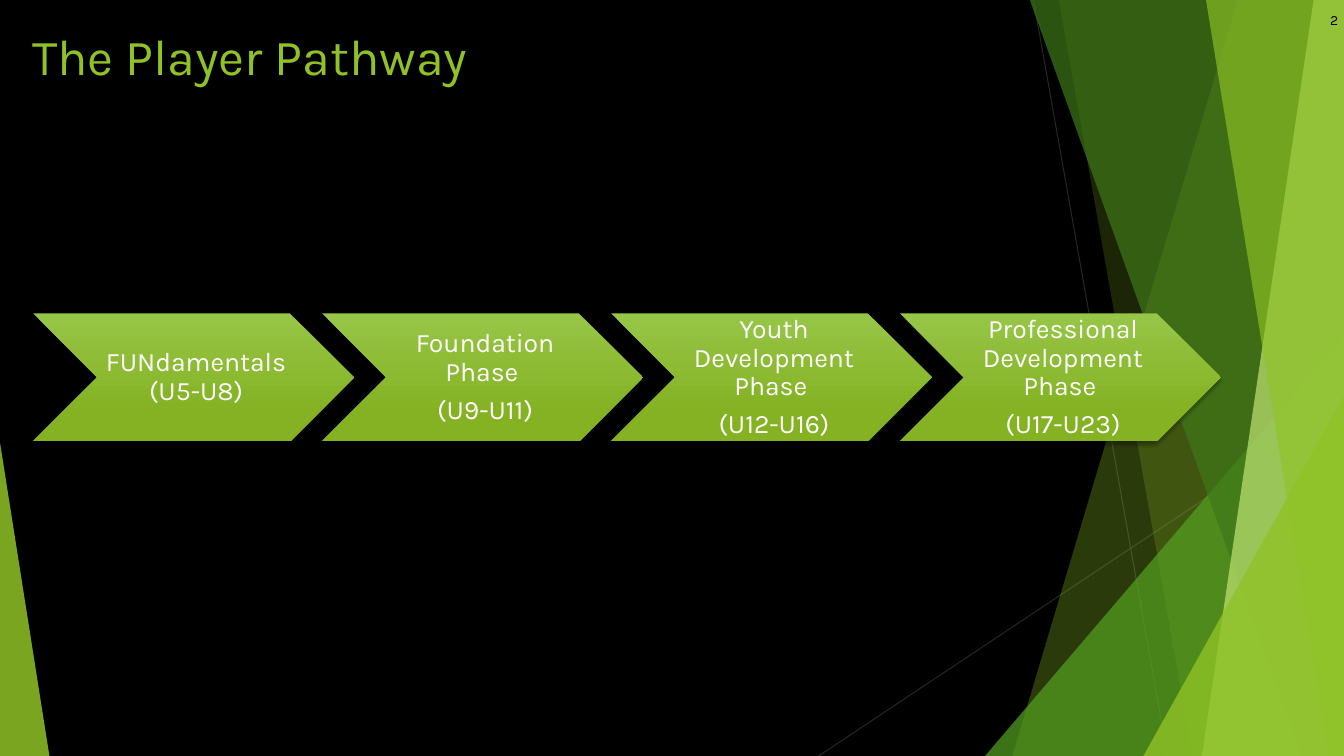
import dataclasses
import typing

import lxml.etree
import pptx
import pptx.dml.color
import pptx.enum.shapes
import pptx.enum.text
import pptx.oxml.ns
import pptx.util

Inches = pptx.util.Inches
Pt = pptx.util.Pt
Shape = pptx.enum.shapes.MSO_SHAPE
Align = pptx.enum.text.PP_ALIGN
Anchor = pptx.enum.text.MSO_ANCHOR
qn = pptx.oxml.ns.qn

SLIDE_W, SLIDE_H = 13.33, 7.5
BAND_TOP = -0.01


@dataclasses.dataclass(frozen=True)
class Theme:
    font: str = "Karla"
    title_size: int = 36
    phase_size: int = 19
    number_size: int = 10
    black: str = "000000"
    white: str = "FFFFFF"
    hairline: str = "262626"
    lime: str = "90C226"
    green: str = "54A021"
    forest: str = "3F7819"
    pale: str = "C0E474"
    chevron_top: str = "97C547"
    chevron_bottom: str = "84B223"


@dataclasses.dataclass(frozen=True)
class Band:
    """A band that runs from a slanted left edge to the slide's right edge."""
    top_x: float
    bottom_x: float
    color: str
    alpha: int


@dataclasses.dataclass(frozen=True)
class Corner:
    """A right triangle that stands on the slide's bottom edge."""
    left: float
    top: float
    width: float
    apex: int
    color: str
    alpha: int


@dataclasses.dataclass(frozen=True)
class TextStyle:
    size: int
    color: str
    align: Align = Align.LEFT
    anchor: Anchor = Anchor.TOP
    insets: tuple[float, float, float, float] = (0.1, 0.05, 0.1, 0.05)
    line_spacing: float = 1.0
    space_after: float = 0


THEME = Theme()
RAYS = [((10.25, 0), (11.58, 7.5)), ((13.33, 4.03), (8.12, 7.5))]
FACETS = [
    Band(12.28, 10.04, THEME.lime, 30),
    Band(10.5, 11.83, THEME.lime, 20),
    Corner(9.77, 3.33, 3.56, 1, THEME.green, 72),
    Band(10.21, 12.91, THEME.forest, 70),
    Band(13.03, 11.92, THEME.pale, 70),
    Band(11.96, 13.18, THEME.lime, 65),
    Corner(11.34, 3.93, 1.99, 1, THEME.lime, 80),
    Corner(0, 4.39, 0.49, 0, THEME.lime, 85),
]
PHASES = [
    ["FUNdamentals (U5-U8)"],
    ["Foundation Phase ", "(U9-U11)"],
    ["Youth Development Phase ", "(U12-U16)"],
    ["Professional Development Phase ", "(U17-U23)"],
]
PHASE_LEFT, PHASE_TOP, PHASE_STEP = 0.33, 3.11, 2.866
PHASE_W, PHASE_H = 3.18, 1.27
LABEL_W = PHASE_W - PHASE_H

TITLE = TextStyle(THEME.title_size, THEME.lime)
LABEL = TextStyle(THEME.phase_size, THEME.white, Align.CENTER, Anchor.MIDDLE,
                  (0.08, 0.03, 0.03, 0.03), 0.9, 6.65)
NUMBER = TextStyle(THEME.number_size, THEME.black, Align.RIGHT, Anchor.MIDDLE)


def rgb(color: str) -> pptx.dml.color.RGBColor:
    return pptx.dml.color.RGBColor.from_string(color)


def add_ray(slide: typing.Any, start: tuple, end: tuple) -> None:
    line = slide.shapes.add_connector(
        pptx.enum.shapes.MSO_CONNECTOR.STRAIGHT,
        *(Inches(v) for v in (*start, *end)))
    line.line.color.rgb = rgb(THEME.hairline)
    line.line.width = Pt(0.75)
    lxml.etree.SubElement(line._element.spPr, qn("a:effectLst"))


def add_facet(slide: typing.Any, facet: Band | Corner) -> None:
    if isinstance(facet, Band):
        builder = slide.shapes.build_freeform(Inches(facet.top_x), Inches(BAND_TOP))
        corners = [(SLIDE_W, BAND_TOP), (SLIDE_W, SLIDE_H), (facet.bottom_x, SLIDE_H)]
        builder.add_line_segments([(Inches(x), Inches(y)) for x, y in corners])
        sp = builder.convert_to_shape()
    else:
        sp = slide.shapes.add_shape(
            Shape.ISOSCELES_TRIANGLE, Inches(facet.left), Inches(facet.top),
            Inches(facet.width), Inches(SLIDE_H - facet.top))
        sp.adjustments[0] = facet.apex
    sp.shadow.inherit = False
    sp.line.fill.background()
    sp.fill.solid()
    sp.fill.fore_color.rgb = rgb(facet.color)
    clr = sp._element.spPr.find(qn("a:solidFill")).find(qn("a:srgbClr"))
    lxml.etree.SubElement(clr, qn("a:alpha"), val=str(facet.alpha * 1000))


def add_text(slide: typing.Any, box: tuple, paragraphs: list[str],
             style: TextStyle) -> None:
    tf = slide.shapes.add_textbox(*(Inches(v) for v in box)).text_frame
    tf.word_wrap = True
    tf.vertical_anchor = style.anchor
    tf.margin_left, tf.margin_top, tf.margin_right, tf.margin_bottom = (
        Inches(v) for v in style.insets)
    for i, text in enumerate(paragraphs):
        p = tf.add_paragraph() if i else tf.paragraphs[0]
        p.alignment = style.align
        p.line_spacing = style.line_spacing
        p.space_after = Pt(style.space_after)
        r = p.add_run()
        r.text = text
        r.font.name = THEME.font
        r.font.size = Pt(style.size)
        r.font.color.rgb = rgb(style.color)


def add_soft_shadow(sp: typing.Any) -> None:
    sp.shadow.inherit = False
    effects = sp._element.spPr.find(qn("a:effectLst"))
    shadow = lxml.etree.SubElement(
        effects, qn("a:outerShdw"), blurRad=str(Pt(3)), dist=str(Pt(2)),
        dir="5400000", rotWithShape="0")
    clr = lxml.etree.SubElement(shadow, qn("a:srgbClr"), val=THEME.black)
    lxml.etree.SubElement(clr, qn("a:alpha"), val="35000")


def add_phase(slide: typing.Any, left: float, paragraphs: list[str]) -> None:
    sp = slide.shapes.add_shape(Shape.CHEVRON, Inches(left), Inches(PHASE_TOP),
                                Inches(PHASE_W), Inches(PHASE_H))
    sp.line.fill.background()
    sp.fill.gradient()
    sp.fill.gradient_angle = 270
    stops = [(0, THEME.chevron_top), (0.78, THEME.chevron_bottom)]
    for stop, (position, color) in zip(sp.fill.gradient_stops, stops):
        stop.position = position
        stop.color.rgb = rgb(color)
    add_soft_shadow(sp)
    add_text(slide, (left + PHASE_H / 2, PHASE_TOP, LABEL_W, PHASE_H),
             paragraphs, LABEL)


def main() -> None:
    prs = pptx.Presentation()
    prs.slide_width, prs.slide_height = Inches(SLIDE_W), Inches(SLIDE_H)
    slide = prs.slides.add_slide(prs.slide_layouts[6])
    slide.background.fill.solid()
    slide.background.fill.fore_color.rgb = rgb(THEME.black)
    for start, end in RAYS:
        add_ray(slide, start, end)
    for facet in FACETS:
        add_facet(slide, facet)
    add_text(slide, (0.22, 0.2, 9.4, 1.17), ["The Player Pathway"], TITLE)
    for i, paragraphs in enumerate(PHASES):
        add_phase(slide, PHASE_LEFT + i * PHASE_STEP, paragraphs)
    add_text(slide, (12.62, 0, 0.75, 0.4), ["2"], NUMBER)
    prs.save("out.pptx")


if __name__ == "__main__":
    main()
